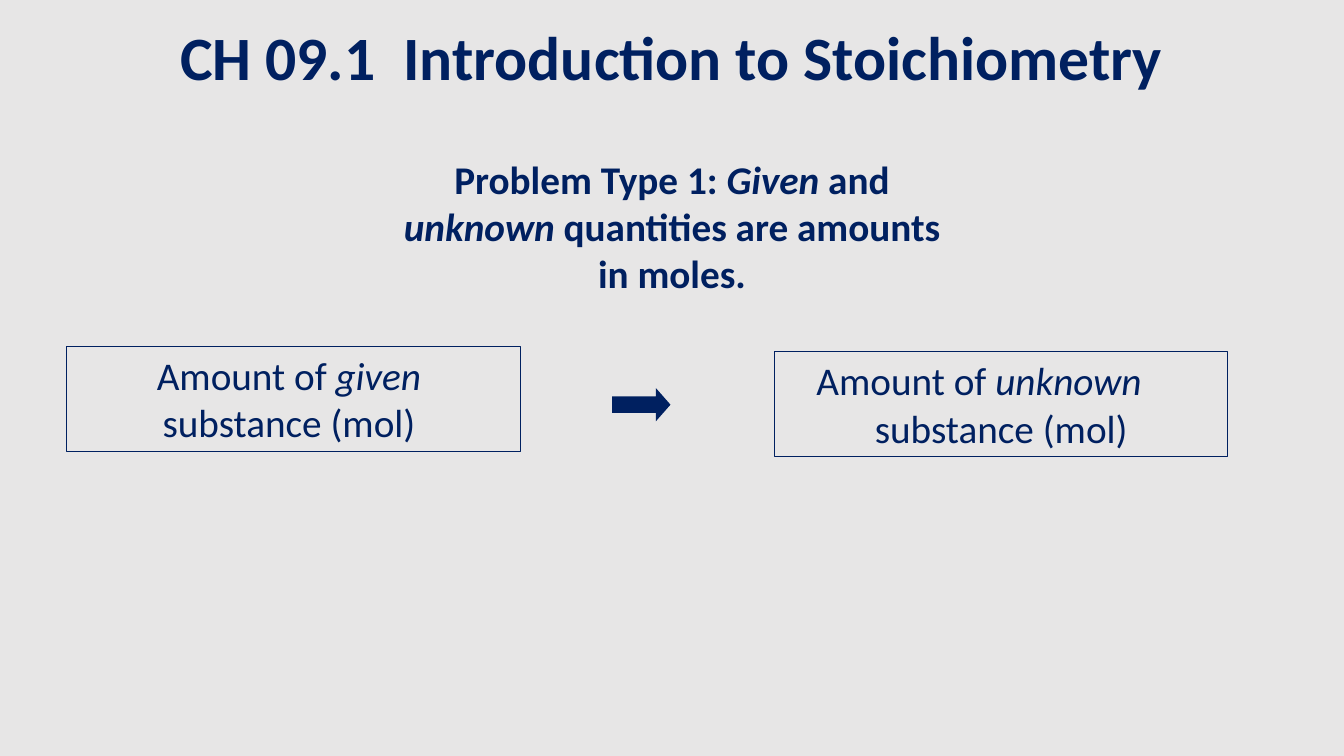
import pptx
import pptx.util
import pptx.dml.color
import pptx.enum.shapes
import pptx.enum.text

NAVY = pptx.dml.color.RGBColor(0x00, 0x20, 0x60)
PALE_GREY = pptx.dml.color.RGBColor(0xE7, 0xE6, 0xE6)
WIDTH, HEIGHT = 13.33, 7.5
MARGIN = 0.66
FULL = WIDTH - 2 * MARGIN
BOX_SIZE = (4.5, 1.04)
ALIGN = pptx.enum.text.PP_ALIGN
SHAPE = pptx.enum.shapes.MSO_SHAPE

# Content: each line is a list of (text, italic) spans
TITLE = [[("CH 09.1  Introduction to Stoichiometry", False)]]
PROBLEM = [
    [("Problem Type 1: ", False), ("Given", True), (" and", False)],
    [("unknown", True), (" quantities are amounts", False)],
    [("in moles.", False)],
]
GIVEN = [[("Amount of ", False), ("given ", True)], [("substance (mol) ", False)]]
UNKNOWN = [[("Amount of ", False), ("unknown", True)], [("substance (mol)", False)]]

HEADINGS = [  # lines, top, height, format
    (TITLE, 0.14, 0.84, {"size": pptx.util.Pt(44), "bold": True}),
    (PROBLEM, 1.49, 1.51, {"size": pptx.util.Pt(28), "bold": True}),
]
AMOUNTS = [  # lines, left, top, left indent of first line (None: centred)
    (GIVEN, MARGIN, 3.44, None),
    (UNKNOWN, 7.68, 3.49, 0.32),
]
ARROW = (6.07, 3.85, 0.58, 0.33)


def inches(*lengths):
    return [pptx.util.Inches(length) for length in lengths]


def write(box, lines, style):
    frame = box.text_frame
    frame.word_wrap = True
    frame.vertical_anchor = pptx.enum.text.MSO_ANCHOR.TOP
    for number, line in enumerate(lines):
        para = frame.paragraphs[0] if number == 0 else frame.add_paragraph()
        para.alignment = ALIGN.CENTER
        for text, italic in line:
            span = para.add_run()
            span.text = text
            span.font.color.rgb = NAVY
            for name, value in {"name": "Calibri", "italic": italic, **style}.items():
                setattr(span.font, name, value)


def add_preset(page, kind, place):
    shape = page.shapes.add_shape(kind, *inches(*place))
    shape.shadow.inherit = False
    return shape


deck = pptx.Presentation()
deck.slide_width, deck.slide_height = inches(WIDTH, HEIGHT)
page = deck.slides.add_slide(deck.slide_layouts[6])
page.background.fill.solid()
page.background.fill.fore_color.rgb = PALE_GREY

# Title and problem statement
for lines, top, height, style in HEADINGS:
    write(page.shapes.add_textbox(*inches(MARGIN, top, FULL, height)), lines, style)

# Outlined amounts
for lines, left, top, indent in AMOUNTS:
    box = add_preset(page, SHAPE.RECTANGLE, (left, top, *BOX_SIZE))
    box.fill.background()
    box.line.color.rgb = NAVY
    box.line.width = pptx.util.Pt(0.75)
    write(box, lines, {"size": pptx.util.Pt(28)})
    if indent is not None:
        para = box.text_frame.paragraphs[0]
        para.alignment = ALIGN.LEFT
        para._p.get_or_add_pPr().set("marL", str(pptx.util.Inches(indent)))

# Arrow from given to unknown
arrow = add_preset(page, SHAPE.RIGHT_ARROW, ARROW)
arrow.adjustments[0], arrow.adjustments[1] = 0.5, 0.44
arrow.fill.solid()
arrow.fill.fore_color.rgb = NAVY
arrow.line.fill.background()

deck.save("out.pptx")
